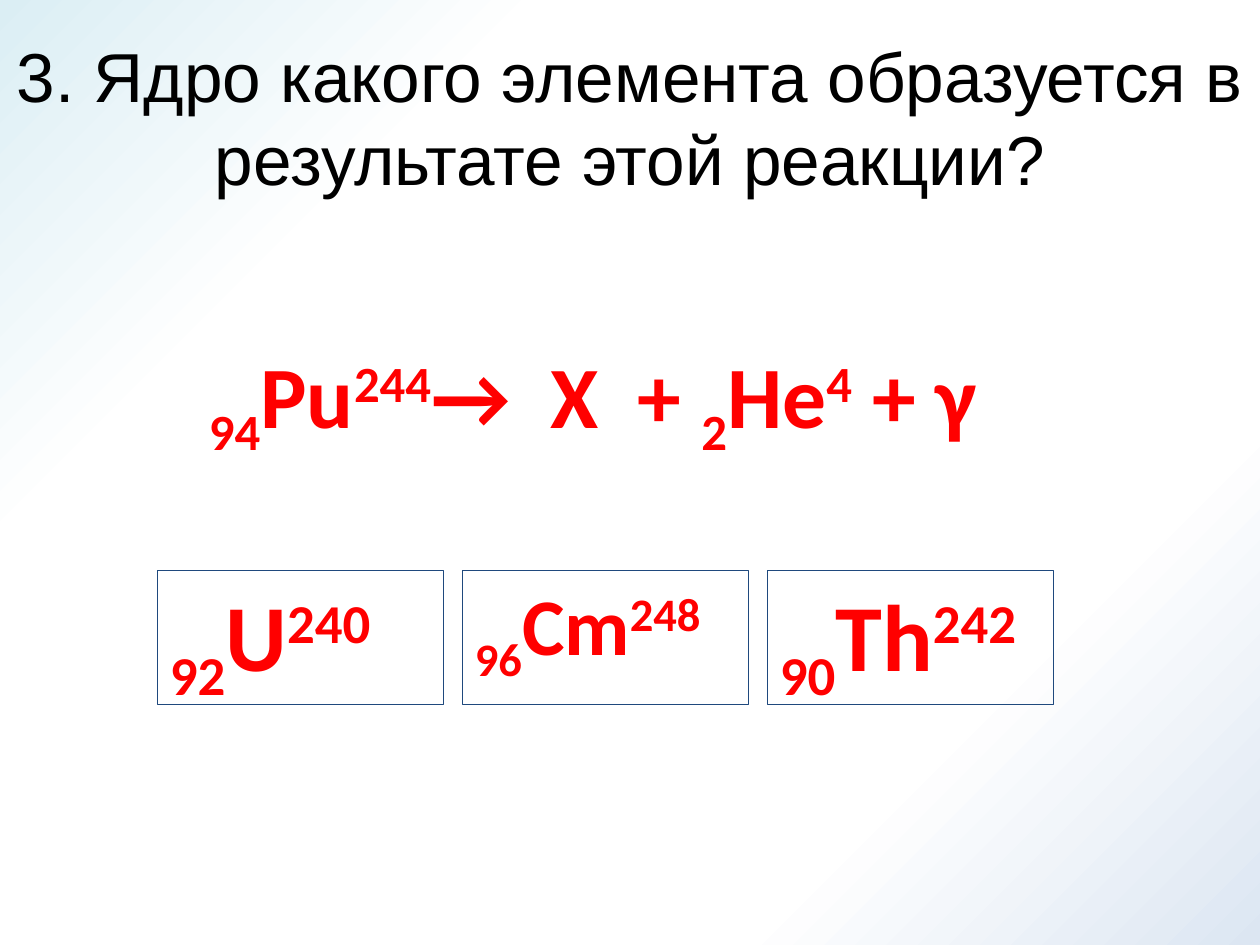
from copy import deepcopy
from dataclasses import dataclass

from pptx import Presentation
from pptx.dml.color import RGBColor
from pptx.enum import shapes, text
from pptx.util import Pt


@dataclass(frozen=True)
class Theme:
    ink: RGBColor = RGBColor(0, 0, 0)
    formula: RGBColor = RGBColor(255, 0, 0)
    border: RGBColor = RGBColor(0x1F, 0x49, 0x7D)
    backdrop: tuple = ((0, "DCE6F2"), (0.24, "FFFFFF"),
                       (0.75, "FFFFFF"), (1, "DBEEF4"))
    title_font: str = "Arial"
    formula_font: str = "Calibri"
    title_size: float = 39.6
    equation_size: float = 50
    answer_size: float = 54
    small_answer_size: float = 45.9


THEME = Theme()
BASELINE = {"sub": "-25000", "super": "30000"}


def nuclide(charge, symbol, mass):
    return [(charge, "sub"), (symbol, None), (mass, "super")]


def paint_background(slide):
    fill = slide.background.fill
    fill.gradient()
    fill.gradient_angle = 135
    stop_list = slide.element.xpath("./p:cSld/p:bg//a:gsLst")[0]
    while len(stop_list) < len(THEME.backdrop):
        stop_list.append(deepcopy(stop_list[0]))
    for stop, (position, color) in zip(fill.gradient_stops, THEME.backdrop):
        stop.position = position
        stop.color.rgb = RGBColor.from_string(color)


def set_font(paragraph, name, size, color, bold=False):
    font = paragraph.font
    font.name, font.size, font.bold = name, Pt(size), bold
    font.color.rgb = color


def write_formula(frame, parts, size, line_spacing=1.0):
    frame.word_wrap = True
    frame.vertical_anchor = text.MSO_ANCHOR.TOP
    paragraph = frame.paragraphs[0]
    paragraph.alignment = text.PP_ALIGN.LEFT
    paragraph.line_spacing = line_spacing
    for wording, level in parts:
        run = paragraph.add_run()
        run.text = wording
        if level:
            run.font._element.set("baseline", BASELINE[level])
    set_font(paragraph, THEME.formula_font, size, THEME.formula, bold=True)


def add_question(slide, left, top, width, height):
    frame = slide.shapes.add_textbox(
        Pt(left), Pt(top), Pt(width), Pt(height)).text_frame
    frame.word_wrap = True
    frame.vertical_anchor = text.MSO_ANCHOR.MIDDLE
    question = frame.paragraphs[0]
    question.text = "3. Ядро какого элемента образуется в результате этой реакции?"
    question.alignment = text.PP_ALIGN.CENTER
    set_font(question, THEME.title_font, THEME.title_size, THEME.ink)


def add_equation(slide, left, top, width, height):
    equation = slide.shapes.add_textbox(
        Pt(left), Pt(top), Pt(width), Pt(height))
    parts = (nuclide("94", "Pu", "244") + [("→  X  + ", None)]
             + nuclide("2", "He", "4") + [(" + γ", None)])
    write_formula(equation.text_frame, parts, THEME.equation_size)


def add_answers(slide, left, top, width, height, gap=10.8):
    answers = [
        (nuclide("92", "U", "240"), THEME.answer_size, 1.0),
        (nuclide("96", "Cm", "248"), THEME.small_answer_size, 0.9),
        (nuclide("90", "Th", "242"), THEME.answer_size, 1.0),
    ]
    card_width = (width - gap * (len(answers) - 1)) / len(answers)
    for column, (parts, size, spacing) in enumerate(answers):
        card = slide.shapes.add_shape(
            shapes.MSO_SHAPE.RECTANGLE,
            Pt(left + column * (card_width + gap)), Pt(top),
            Pt(card_width), Pt(height))
        card.shadow.inherit = False
        card.fill.background()
        card.line.color.rgb = THEME.border
        card.line.width = Pt(0.75)
        write_formula(card.text_frame, parts, size, spacing)


def main():
    deck = Presentation()
    deck.slide_width, deck.slide_height = Pt(720), Pt(540)
    slide = deck.slides.add_slide(deck.slide_layouts[6])
    paint_background(slide)
    # Question
    add_question(slide, 0, 21.6, 720, 90)
    # Nuclear reaction
    add_equation(slide, 112.3, 191.5, 483.8, 76.3)
    # Answer choices
    add_answers(slide, 90, 326.2, 512, 76.3)
    deck.save("out.pptx")


if __name__ == "__main__":
    main()
